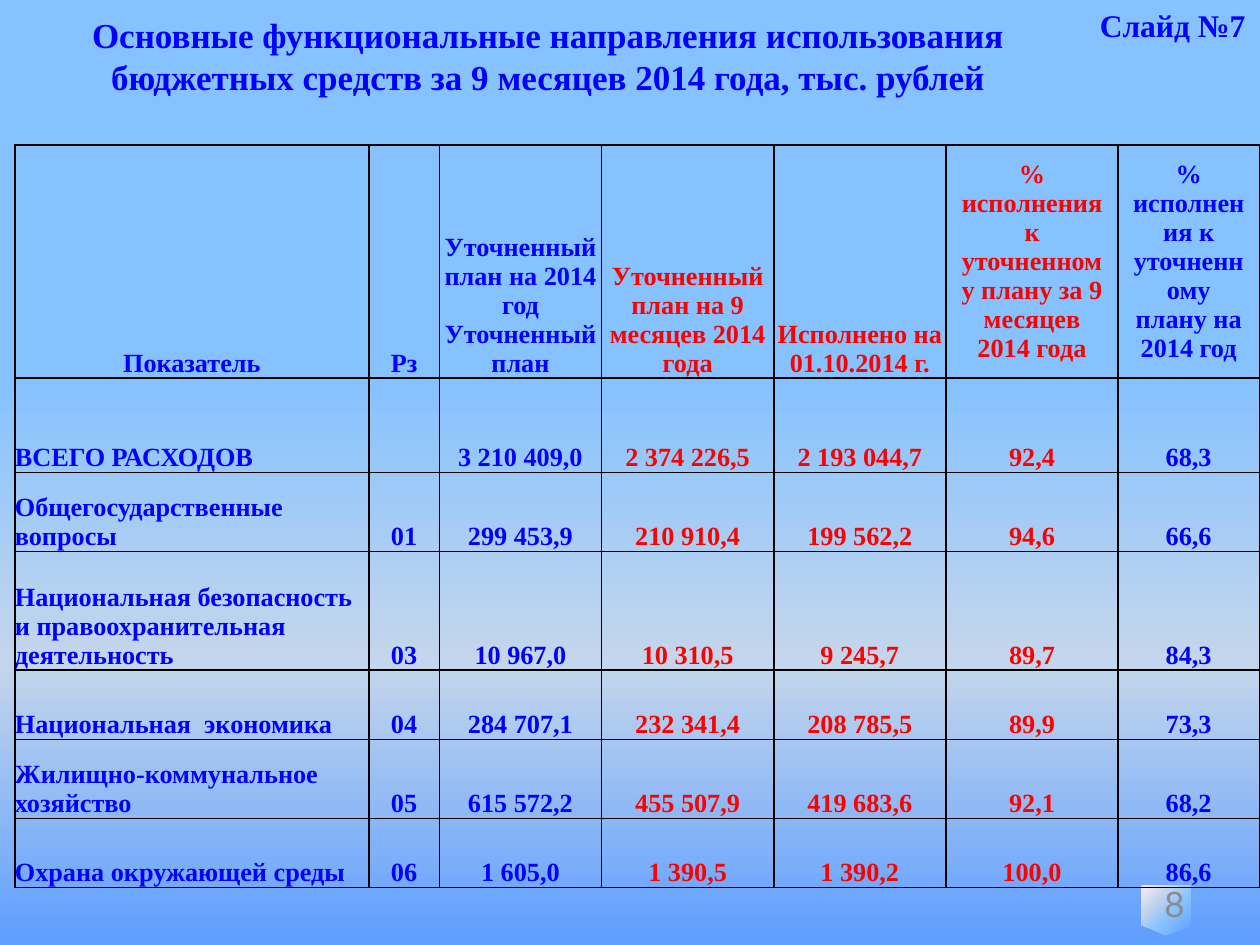
from pptx import Presentation
from pptx.dml.color import RGBColor
from pptx.enum.shapes import MSO_SHAPE
from pptx.enum.text import MSO_ANCHOR, MSO_AUTO_SIZE, PP_ALIGN
from pptx.oxml import parse_xml
from pptx.oxml.ns import nsdecls, qn
from pptx.util import Pt

LEFT, CENTER, RIGHT = PP_ALIGN.LEFT, PP_ALIGN.CENTER, PP_ALIGN.RIGHT
MIDDLE, BOTTOM = MSO_ANCHOR.MIDDLE, MSO_ANCHOR.BOTTOM
FIT_SHAPE = MSO_AUTO_SIZE.SHAPE_TO_FIT_TEXT
PENTAGON = MSO_SHAPE.FLOWCHART_OFFPAGE_CONNECTOR

BLUE = RGBColor(0x00, 0x00, 0xFF)
RED = RGBColor(0xFF, 0x00, 0x00)
GRAY = RGBColor(0x8C, 0x8C, 0x8C)
BLACK = RGBColor(0x00, 0x00, 0x00)
DEEP = RGBColor(0x5E, 0x9E, 0xFF)
SKY = RGBColor(0x85, 0xC2, 0xFF)
MIST = RGBColor(0xC4, 0xD6, 0xEB)
PINK = RGBColor(0xFF, 0xEB, 0xFA)


def write(tf, text, size=15, color=BLUE, font="Times New Roman", bold=True, align=LEFT):
    """Fill a text frame, one paragraph per line of text."""
    for i, line in enumerate(text.split("\n")):
        p = tf.paragraphs[0] if i == 0 else tf.add_paragraph()
        p.alignment = align
        r = p.add_run()
        r.text = line
        r.font.size, r.font.name, r.font.bold = Pt(size), font, bold
        r.font.color.rgb = color


def set_gradient(parent, stops, direction):
    """Replace the stops and direction of the gradient inside parent."""
    grad = next(parent.iter(qn("a:gradFill")))
    for child in list(grad):
        grad.remove(child)
    gs = "".join(f'<a:gs pos="{pos * 1000}"><a:srgbClr val="{color}"/></a:gs>'
                 for pos, color in stops)
    grad.append(parse_xml(f'<a:gsLst {nsdecls("a")}>{gs}</a:gsLst>'))
    grad.append(parse_xml(direction))


prs = Presentation()
prs.slide_width, prs.slide_height = Pt(720), Pt(540)
s = prs.slides.add_slide(prs.slide_layouts[6])

# Background
s.background.fill.gradient()
set_gradient(s.element, [(40, SKY), (70, MIST), (100, DEEP)],
             f'<a:lin {nsdecls("a")} ang="5400000" scaled="0"/>')

# Page number on its marker
sp = s.shapes.add_shape(PENTAGON, Pt(652.3), Pt(506), Pt(28.3), Pt(28.3))
sp.shadow.inherit = False
sp.line.fill.background()
sp.fill.gradient()
set_gradient(sp.element, [(0, DEEP), (40, SKY), (70, MIST), (100, PINK)],
             f'<a:path {nsdecls("a")} path="circle">'
             '<a:fillToRect l="100000" t="100000"/></a:path>')

sp = s.shapes.add_textbox(Pt(516), Pt(500.5), Pt(168), Pt(31))
tf = sp.text_frame
tf.word_wrap = True
tf.vertical_anchor = MIDDLE
write(tf, "8", size=20, color=GRAY, font="Lato", bold=False, align=RIGHT)

# Budget table
ROWS = [
    ["Показатель", "Рз", "Уточненный план на 2014 год\nУточненный план",
     "Уточненный план на 9 месяцев 2014 года", "Исполнено на 01.10.2014 г.",
     "% исполнения к уточненному плану за 9 месяцев 2014 года",
     "% исполнения к уточненному плану на 2014 год"],
    ["ВСЕГО РАСХОДОВ", "", "3 210 409,0", "2 374 226,5", "2 193 044,7", "92,4", "68,3"],
    ["Общегосударственные вопросы", "01", "299 453,9", "210 910,4", "199 562,2",
     "94,6", "66,6"],
    ["Национальная безопасность и правоохранительная деятельность", "03",
     "10 967,0", "10 310,5", "9 245,7", "89,7", "84,3"],
    ["Национальная  экономика", "04", "284 707,1", "232 341,4", "208 785,5",
     "89,9", "73,3"],
    ["Жилищно-коммунальное хозяйство", "05", "615 572,2", "455 507,9", "419 683,6",
     "92,1", "68,2"],
    ["Охрана окружающей среды", "06", "1 605,0", "1 390,5", "1 390,2", "100,0", "86,6"],
]
COL_WIDTHS = [202.3, 40.3, 92.7, 98.4, 98.4, 98.4, 80.7]
ROW_HEIGHTS = [123.5, 54, 45, 68, 39.6, 45, 39.6]
RED_COLS = (3, 4, 5)

table = s.shapes.add_table(len(ROWS), len(COL_WIDTHS), Pt(8.5), Pt(82.8),
                           Pt(sum(COL_WIDTHS)), Pt(sum(ROW_HEIGHTS))).table
table.first_row = table.horz_banding = False
for col, width in zip(table.columns, COL_WIDTHS):
    col.width = Pt(width)
for row, height in zip(table.rows, ROW_HEIGHTS):
    row.height = Pt(height)

for i, values in enumerate(ROWS):
    for j, text in enumerate(values):
        cell = table.cell(i, j)
        cell.fill.background()
        if i == 0 and j >= 5:
            cell.vertical_anchor = MIDDLE
        else:
            cell.vertical_anchor = BOTTOM
            cell.margin_left = cell.margin_right = 0
            cell.margin_top = cell.margin_bottom = 0
        if text:
            write(cell.text_frame, text, color=RED if j in RED_COLS else BLUE,
                  align=LEFT if i and j == 0 else CENTER)
        # Borders come before the fill in the cell properties
        tcPr = cell._tc.get_or_add_tcPr()
        for k, side in enumerate("LRTB"):
            tcPr.insert(k, parse_xml(
                f'<a:ln{side} {nsdecls("a")} w="{Pt(1)}"><a:solidFill>'
                f'<a:srgbClr val="{BLACK}"/></a:solidFill></a:ln{side}>'))

# Title and slide label
sp = s.shapes.add_textbox(0, Pt(4.3), Pt(626.4), Pt(55.4))
tf = sp.text_frame
tf.word_wrap = True
tf.auto_size = FIT_SHAPE
write(tf, "Основные функциональные направления использования бюджетных средств "
      "за 9 месяцев 2014 года, тыс. рублей", size=20, align=CENTER)

sp = s.shapes.add_textbox(Pt(621.4), 0, Pt(98.6), Pt(28.8))
tf = sp.text_frame
tf.word_wrap = False
tf.auto_size = FIT_SHAPE
write(tf, "Слайд №7", size=18)

prs.save("out.pptx")
